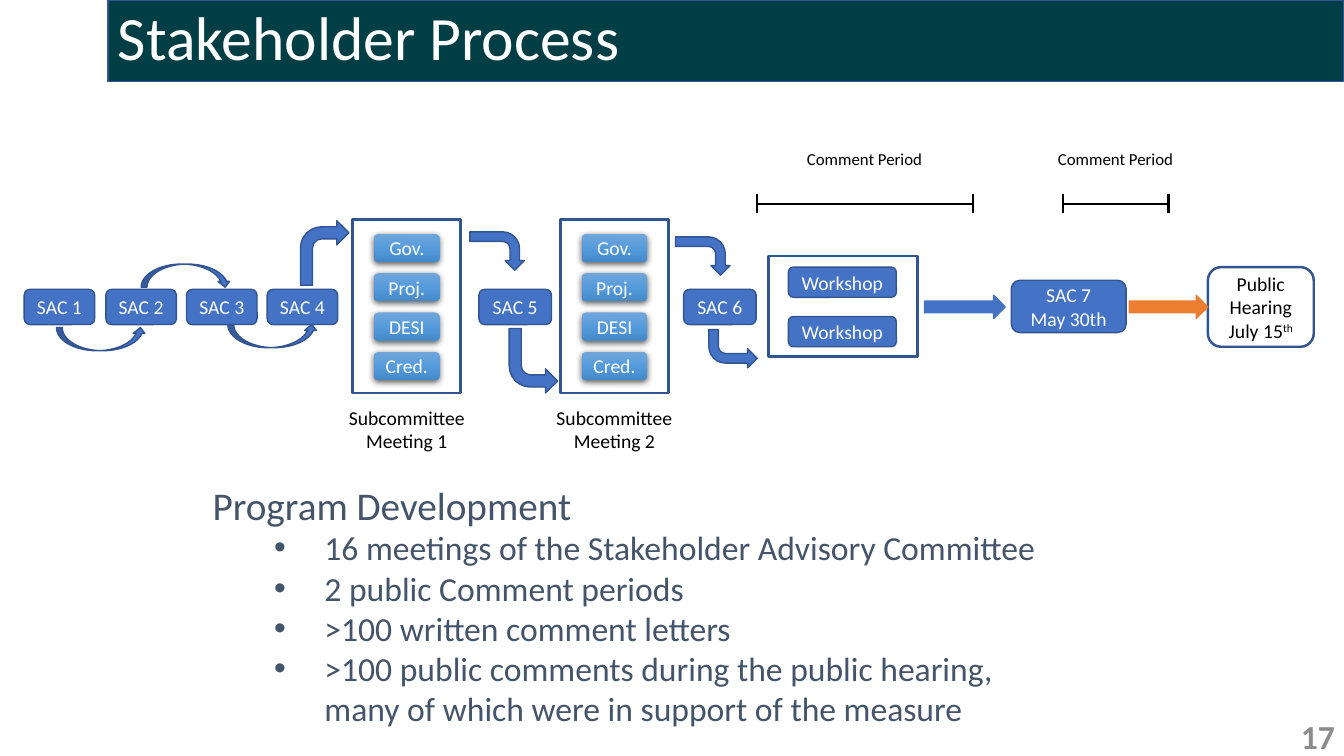
from pptx import Presentation
from pptx import util as u
from pptx.dml.color import RGBColor
from pptx.enum import shapes, text
from pptx.oxml import parse_xml
from pptx.oxml.ns import qn
from copy import deepcopy

NS = 'xmlns:a="http://schemas.openxmlformats.org/drawingml/2006/main"'
SHAPE = shapes.MSO_SHAPE
BLUE, EDGE, ORANGE = "4472C4", "325491", "ED7D31"
TEAL, SLATE, GRAY, WHITE, BLACK = "003E46", "44546A", "8C8C8C", "FFFFFF", "000000"
GRADIENT = [(0, "71A6DB"), (0.5, "559BDB"), (1, "448ACA")]


def rgb(value):
    return RGBColor.from_string(value)


def apply(target, values):
    for name, value in values.items():
        setattr(target, name, value)


def outer_shadow(blur, dist, alpha):
    return parse_xml(
        f'<a:outerShdw {NS} blurRad="{u.Pt(blur)}" dist="{u.Pt(dist)}" dir="5400000" rotWithShape="0">'
        f'<a:srgbClr val="{BLACK}"><a:alpha val="{alpha * 1000}"/></a:srgbClr></a:outerShdw>')


class Deck:
    font = "Calibri"

    def __init__(self):
        self.prs = Presentation()
        apply(self.prs, dict(slide_width=u.Inches(13.33), slide_height=u.Inches(7.5)))
        self.s = self.prs.slides.add_slide(self.prs.slide_layouts[5])

    def run(self, p, words, size, color, **extra):
        r = p.add_run()
        r.text = words
        apply(r.font, dict(name=self.font, size=u.Pt(size), **extra))
        r.font.color.rgb = rgb(color)
        return r

    def frame(self, tf, anchor=text.MSO_ANCHOR.MIDDLE, inset=0.0):
        apply(tf, dict(word_wrap=True, vertical_anchor=anchor, auto_size=text.MSO_AUTO_SIZE.NONE,
                       margin_left=u.Inches(inset), margin_right=u.Inches(inset),
                       margin_top=u.Inches(inset / 2), margin_bottom=u.Inches(inset / 2)))
        return tf

    def paint(self, sp, fill, line, weight):
        if fill:
            sp.fill.solid()
            sp.fill.fore_color.rgb = rgb(fill)
        else:
            sp.fill.background()
        if line:
            sp.line.color.rgb = rgb(line)
            sp.line.width = u.Pt(weight)
        else:
            sp.line.fill.background()

    def title(self, words, *box):
        sp = self.s.shapes.title
        apply(sp, dict(zip(("left", "top", "width", "height"), map(u.Inches, box))))
        self.paint(sp, TEAL, EDGE, 1)
        p = self.frame(sp.text_frame, inset=0.1).paragraphs[0]
        apply(p, dict(alignment=text.PP_ALIGN.LEFT, line_spacing=0.9))
        self.run(p, words, 44, WHITE)

    def shape(self, kind, *box, fill=BLUE, line=EDGE, weight=1, rotation=0, flip=False):
        sp = self.s.shapes.add_shape(kind, *map(u.Inches, box))
        sp.shadow.inherit = False
        self.paint(sp, fill, line, weight)
        sp.rotation = rotation
        if flip:
            sp._element.spPr.find(qn("a:xfrm")).set("flipV", "1")
        return sp

    def box(self, lines, *box, size=14, color=WHITE, **look):
        sp = self.shape(SHAPE.ROUNDED_RECTANGLE, *box, **look)
        tf = self.frame(sp.text_frame)
        for i, words in enumerate(lines):
            p = tf.add_paragraph() if i else tf.paragraphs[0]
            p.alignment = text.PP_ALIGN.CENTER
            self.run(p, words, size, color)
        return sp

    def label(self, words, *box, size):
        return self.box([words], *box, size=size, color=BLACK, fill=None, line=None)

    def topic(self, words, *box):
        sp = self.box([words], *box, line=None)
        sp.fill.gradient()
        sp.fill.gradient_angle = 270
        stops = sp._element.spPr.find(qn("a:gradFill")).find(qn("a:gsLst"))
        stops.insert(1, deepcopy(stops[0]))
        for stop, (position, color) in zip(sp.fill.gradient_stops, GRADIENT):
            stop.position = position
            stop.color.rgb = rgb(color)
        sp._element.spPr.find(qn("a:effectLst")).append(outer_shadow(4.5, 1.5, 63))
        return sp

    def group(self, members):
        self.s.shapes.add_group_shape(members)

    def line(self, x1, y1, x2, y2):
        c = self.s.shapes.add_connector(shapes.MSO_CONNECTOR.STRAIGHT, *map(u.Inches, (x1, y1, x2, y2)))
        c.line.color.rgb = rgb(BLACK)
        c.line.width = u.Pt(1.5)
        c._element.spPr.append(parse_xml(f"<a:effectLst {NS}/>"))
        return c

    def span(self, x1, x2, y):
        self.group([self.line(x1, y, x2, y)] + [self.line(x, y - 0.1, x, y + 0.09) for x in (x1, x2)])

    def note(self, words, *box, size, color, align=text.PP_ALIGN.LEFT, indent=0.0, bold=False):
        sp = self.s.shapes.add_textbox(*map(u.Inches, box))
        p = self.frame(sp.text_frame, inset=0.1).paragraphs[0]
        p.alignment = align
        p._p.get_or_add_pPr().set("marL", str(u.Inches(indent)))
        self.run(p, words, size, color, bold=bold)

    def bullets(self, items, *box):
        sp = self.s.shapes.add_textbox(*map(u.Inches, box))
        tf = self.frame(sp.text_frame, text.MSO_ANCHOR.TOP, 0.1)
        tf.margin_right = u.Inches(0.3)
        for i, words in enumerate(items):
            p = tf.add_paragraph() if i else tf.paragraphs[0]
            pPr = p._p.get_or_add_pPr()
            apply_indent = dict(marL=u.Inches(0.5), indent=-u.Inches(0.5))
            for name, value in apply_indent.items():
                pPr.set(name, str(value))
            for xml in (f'<a:buClr {NS}><a:srgbClr val="{SLATE}"/></a:buClr>',
                        f'<a:buFont {NS} typeface="Arial"/>', f'<a:buChar {NS} char="•"/>'):
                pPr.append(parse_xml(xml))
            r = self.run(p, words, 24, SLATE)
            effects = parse_xml(f"<a:effectLst {NS}/>")
            effects.append(outer_shadow(4, 2, 30))
            r.font._element.find(qn("a:solidFill")).addnext(effects)


def main():
    d = Deck()
    d.title("Stakeholder Process", 1.07, 0, 12.26, 0.81)
    d.note("17", 12.68, 7.1, 0.66, 0.4, size=24, color=GRAY, align=text.PP_ALIGN.RIGHT, bold=True)

    for number, left in enumerate((0.24, 1.05, 1.85, 2.65, 4.75, 6.78), 1):
        d.box([f"SAC {number}"], left, 2.87, 0.7 if number < 5 else 0.72, 0.35)
    for left, top, flip in ((0.56, 3.25, False), (2.26, 3.22, False), (1.4, 2.62, True)):
        d.shape(SHAPE.CURVED_UP_ARROW, left, top, 0.89, 0.23, flip=flip)

    for meeting, left in enumerate((3.5, 5.56), 1):
        d.shape(SHAPE.RECTANGLE, left, 2.18, 1.07, 1.72, fill=None, weight=2)
        d.group([d.topic(name, left + 0.21, 2.32 + 0.39 * i, 0.65, 0.28)
                 for i, name in enumerate(("Gov.", "Proj.", "DESI", "Cred."))])
        d.label(f"Subcommittee Meeting {meeting}", left - 0.3, 3.95, 1.67, 0.62, size=14)

    for left, top, width, height, rotation, flip in (
            (2.98, 2.19, 0.48, 0.64, 0, False), (5.05, 3.26, 0.48, 0.64, 0, True),
            (4.74, 2.22, 0.38, 0.54, 90, False), (6.78, 2.27, 0.38, 0.54, 90, False),
            (7.03, 3.27, 0.48, 0.38, 0, True)):
        d.shape(SHAPE.BENT_ARROW, left, top, width, height, rotation=rotation, flip=flip)

    d.shape(SHAPE.RECTANGLE, 7.62, 2.54, 1.48, 1, fill=None, weight=2)
    d.group([d.box(["Workshop"], 7.82, top, 1.07, 0.3) for top in (2.65, 3.14)])
    d.box(["SAC 7", "May 30th"], 10.03, 2.78, 1.14, 0.52)
    hearing = d.box(["Public Hearing", "July 15"], 11.98, 2.65, 1.05, 0.79,
                    color=BLACK, fill=None, weight=1.75)
    r = d.run(hearing.text_frame.paragraphs[1], "th", 14, BLACK)
    r.font._element.set("baseline", "30000")
    for left, width, color in ((9.17, 0.8, BLUE), (11.2, 0.78, ORANGE)):
        d.shape(SHAPE.RIGHT_ARROW, left, 2.93, width, 0.23, fill=color, line=color)

    for left, start, end in ((7.54, 7.51, 9.65), (10.03, 10.54, 11.59)):
        d.label("Comment Period", left, 1.13, 2.07, 0.9, size=12)
        d.span(start, end, 2.02)

    d.note("Program Development", 1.39, 4.74, 8.09, 0.54, size=28, color=SLATE, indent=0.62)
    d.bullets(["16 meetings of the Stakeholder Advisory Committee",
               "2 public Comment periods",
               ">100 written comment letters",
               ">100 public comments during the public hearing, many of which were in support of the measure"],
              2.62, 5.18, 8.1, 2.12)
    d.prs.save("out.pptx")


if __name__ == "__main__":
    main()
